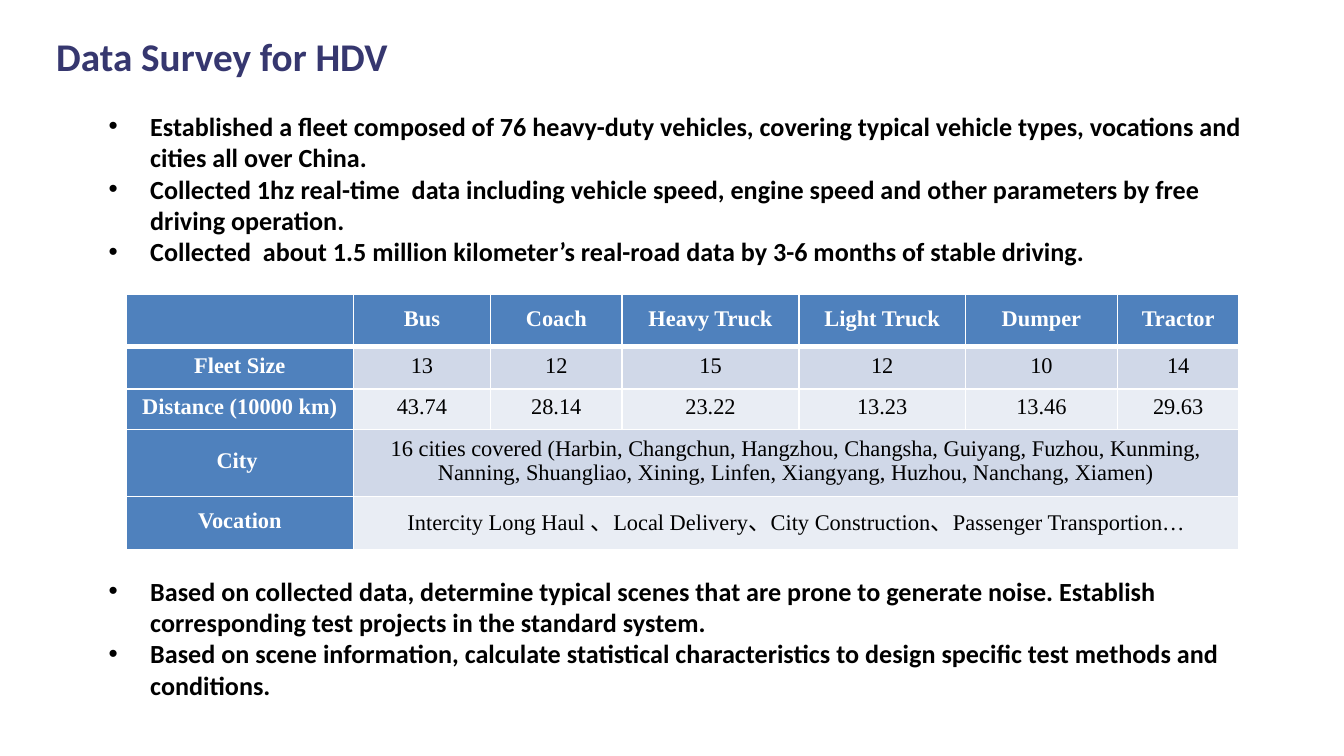
from lxml import etree
from pptx import Presentation, util as u
from pptx.dml.color import RGBColor
from pptx.enum import text
from pptx.oxml import ns

COLUMNS, ROWS = 100, 56.25  # grid of tenths of an inch


def color(value):
    return RGBColor.from_string(value)


class SlideBuilder:
    heading_color, ink, white = "36376F", "000000", "FFFFFF"
    header_fill, bands = "4F81BD", ("D0D8E8", "E9EDF4")
    text_font, table_font = "Calibri", "Times New Roman"

    def __init__(self, presentation):
        self.slide = presentation.slides.add_slide(presentation.slide_layouts[6])
        self.column = presentation.slide_width / COLUMNS
        self.row = presentation.slide_height / ROWS

    def place(self, left, top, width, height):
        return (round(left * self.column), round(top * self.row),
                round(width * self.column), round(height * self.row))

    def set_font(self, paragraph, name, size, ink, bold):
        font = paragraph.font
        font.name, font.size, font.bold = name, u.Pt(size), bold
        font.color.rgb = color(ink)

    def text_box(self, area, lines, size, ink, bulleted=False):
        frame = self.slide.shapes.add_textbox(*self.place(*area)).text_frame
        frame.word_wrap = True
        frame.auto_size = text.MSO_AUTO_SIZE.SHAPE_TO_FIT_TEXT
        frame.text = "\n".join(lines)
        for paragraph in frame.paragraphs:
            self.set_font(paragraph, self.text_font, size, ink, True)
            if bulleted:
                self.add_bullet(paragraph)

    def add_bullet(self, paragraph):
        indent = u.Inches(0.31)
        properties = paragraph._p.get_or_add_pPr()
        properties.set("marL", str(indent))
        properties.set("indent", str(-indent))
        bullet_font = etree.Element(ns.qn("a:buFont"), typeface="Arial")
        bullet = etree.Element(ns.qn("a:buChar"), char="•")
        properties.insert(0, bullet_font)
        bullet_font.addnext(bullet)

    def table(self, area, widths, heights, rows):
        table = self.slide.shapes.add_table(
            len(heights), len(widths), *self.place(*area)).table
        for column, width in zip(table.columns, widths):
            column.width = round(width * self.column)
        for row, height in zip(table.rows, heights):
            row.height = round(height * self.row)
        for r, values in enumerate(rows):
            for c in range(len(widths)):
                value = values[c] if c < len(values) else ""
                self.fill_cell(table.cell(r, c), value, r, c)
            # A row with a single value spans all vehicle columns
            if len(values) == 2:
                table.cell(r, 1).merge(table.cell(r, len(widths) - 1))

    def fill_cell(self, cell, value, r, c):
        header = r == 0 or c == 0
        self.add_borders(cell, top=3 if r == 1 else 1, bottom=3 if r == 0 else 1)
        cell.fill.solid()
        cell.fill.fore_color.rgb = color(
            self.header_fill if header else self.bands[(r - 1) % 2])
        cell.margin_left = cell.margin_right = cell.margin_top = u.Inches(0.01)
        cell.margin_bottom = u.Inches(0.04)
        cell.vertical_anchor = text.MSO_ANCHOR.MIDDLE
        cell.text = value
        paragraph = cell.text_frame.paragraphs[0]
        paragraph.alignment = text.PP_ALIGN.CENTER
        self.set_font(paragraph, self.table_font, 12,
                      self.white if header else self.ink, header)

    def add_borders(self, cell, top, bottom):
        properties = cell._tc.get_or_add_tcPr()
        for side, width in zip("LRTB", (1, 1, top, bottom)):
            line = etree.SubElement(properties, ns.qn(f"a:ln{side}"), w=str(u.Pt(width)))
            fill = etree.SubElement(line, ns.qn("a:solidFill"))
            etree.SubElement(fill, ns.qn("a:srgbClr"), val=self.white)


def main():
    presentation = Presentation()
    # Widescreen, 16:9
    presentation.slide_width = u.Inches(10)
    presentation.slide_height = presentation.slide_width * 9 // 16
    builder = SlideBuilder(presentation)

    # Survey table
    builder.table(
        (9.4, 21.9, 82.8, 19),
        (16.9, 10.2, 9.8, 13.15, 12.4, 11.3, 9.05), (3.9, 3.15, 3, 5, 3.95),
        [
            ("", "Bus", "Coach", "Heavy Truck", "Light Truck", "Dumper", "Tractor"),
            ("Fleet Size", "13", "12", "15", "12", "10", "14"),
            ("Distance (10000 km)", "43.74", "28.14", "23.22", "13.23", "13.46", "29.63"),
            ("City ", "16 cities covered (Harbin, Changchun, Hangzhou, Changsha, Guiyang, "
             "Fuzhou, Kunming, Nanning, Shuangliao, Xining, Linfen, Xiangyang, Huzhou, "
             "Nanchang, Xiamen)"),
            ("Vocation", "Intercity Long Haul 、Local Delivery、City Construction、"
             "Passenger Transportion…"),
        ])

    # Fleet and data collection
    builder.text_box((7.1, 7.7, 89, 12.8), [
        "Established a fleet composed of 76 heavy-duty vehicles, covering typical "
        "vehicle types, vocations and cities all over China.",
        "Collected 1hz real-time  data including vehicle speed, engine speed and "
        "other parameters by free driving operation.",
        "Collected  about 1.5 million kilometer’s real-road data by 3-6 months of "
        "stable driving.",
    ], 14, builder.ink, bulleted=True)

    # Title
    builder.text_box((3.2, 1.9, 50, 4.5), ["Data Survey for HDV"], 21, builder.heading_color)

    # Use of the collected data
    builder.text_box((7.1, 42.3, 87.4, 10.4), [
        "Based on collected data, determine typical scenes that are prone to generate "
        "noise. Establish corresponding test projects in the standard system.",
        "Based on scene information, calculate statistical characteristics to design "
        "specific test methods and conditions.",
    ], 14, builder.ink, bulleted=True)

    presentation.save("out.pptx")


if __name__ == "__main__":
    main()
